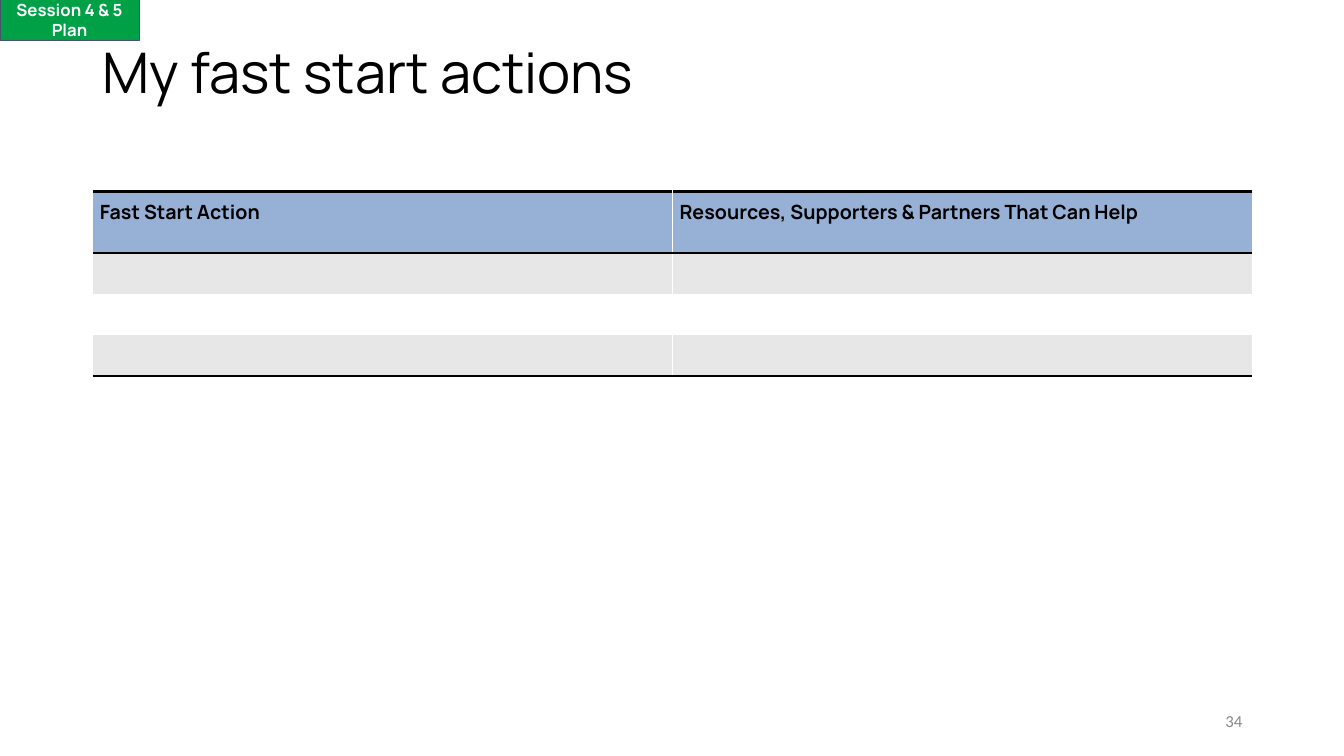
from pptx import Presentation
from pptx.dml.color import RGBColor
from pptx.enum.shapes import MSO_SHAPE
from pptx.enum.text import MSO_ANCHOR, PP_ALIGN
from pptx.oxml import parse_xml
from pptx.oxml.ns import nsdecls
from pptx.util import Inches, Pt

HEADS = ["Fast Start Action", "Resources, Supporters & Partners That Can Help"]
FILLS = ["97B1D6", "E7E7E7", "FFFFFF", "E7E7E7"]


def color(code):
    return RGBColor.from_string(code)


def write(frame, lines, size, code, font="Manrope", bold=False,
          align=PP_ALIGN.LEFT, anchor=MSO_ANCHOR.TOP):
    frame.word_wrap = True
    frame.vertical_anchor = anchor
    for i, line in enumerate(lines):
        para = frame.paragraphs[0] if i == 0 else frame.add_paragraph()
        para.alignment = align
        run = para.add_run()
        run.text = line
        run.font.name = font
        run.font.size = Pt(size)
        run.font.bold = bold
        run.font.color.rgb = color(code)


def add_text(slide, box, lines, size, code, **style):
    frame = slide.shapes.add_textbox(*map(Inches, box)).text_frame
    write(frame, lines, size, code, **style)
    return frame


def add_title(slide, box):
    frame = add_text(slide, box, ["My fast start actions"], 40, "000000")
    frame.paragraphs[0].line_spacing = 0.9


def add_tag(slide, box):
    tag = slide.shapes.add_shape(MSO_SHAPE.RECTANGLE, *map(Inches, box))
    tag.shadow.inherit = False
    tag.fill.solid()
    tag.fill.fore_color.rgb = color("00A047")
    tag.line.color.rgb = color("44546A")
    tag.line.width = Pt(0.75)
    frame = tag.text_frame
    frame.margin_left = frame.margin_right = Inches(0.1)
    frame.margin_top = frame.margin_bottom = Inches(0.1)
    write(frame, ["Session 4 & 5", "Plan"], 12, "FFFFFF", bold=True,
          align=PP_ALIGN.CENTER, anchor=MSO_ANCHOR.MIDDLE)


def set_edges(cell, edges):
    props = cell._tc.get_or_add_tcPr()
    for i, side in enumerate("LRTB"):
        if side in edges:
            code, width = edges[side]
            paint = f'<a:solidFill><a:srgbClr val="{code}"/></a:solidFill>'
        else:
            paint, width = "<a:noFill/>", 0
        props.insert(i, parse_xml(
            f'<a:ln{side} {nsdecls("a")} w="{Pt(width)}">{paint}</a:ln{side}>'))


def add_grid(slide, box):
    left, top, width, height = box
    count = len(FILLS)
    grid = slide.shapes.add_table(count, len(HEADS), *map(Inches, box)).table
    grid.first_row = grid.horz_banding = False
    for col in grid.columns:
        col.width = Inches(width / len(HEADS))
    for r, fill in enumerate(FILLS):
        grid.rows[r].height = Inches(height * (1.5 if r == 0 else 1) / (count + 0.5))
        for c, head in enumerate(HEADS):
            cell = grid.cell(r, c)
            cell.fill.solid()
            cell.fill.fore_color.rgb = color(fill)
            edges = {"R" if c == 0 else "L": ("FFFFFF", 1)}
            if r < 2:
                edges["T"] = ("000000", 2)
            if r in (0, count - 1):
                edges["B"] = ("000000", 2)
            set_edges(cell, edges)
            if r == 0:
                cell.margin_left = cell.margin_right = Inches(0.07)
                cell.margin_top = cell.margin_bottom = Inches(0.07)
                write(cell.text_frame, [head], 14, "000000", bold=True)


def main():
    deck = Presentation()
    deck.slide_width = Inches(13.33)
    deck.slide_height = Inches(7.5)
    slide = deck.slides.add_slide(deck.slide_layouts[6])
    add_title(slide, (0.92, 0.4, 11.5, 1.45))
    add_grid(slide, (0.92, 1.9, 11.5, 1.83))
    add_text(slide, (9.42, 6.95, 3, 0.4), ["34"], 12, "888888", font="Calibri",
             align=PP_ALIGN.RIGHT, anchor=MSO_ANCHOR.MIDDLE)
    add_tag(slide, (0, 0, 1.38, 0.4))
    deck.save("out.pptx")


if __name__ == "__main__":
    main()
